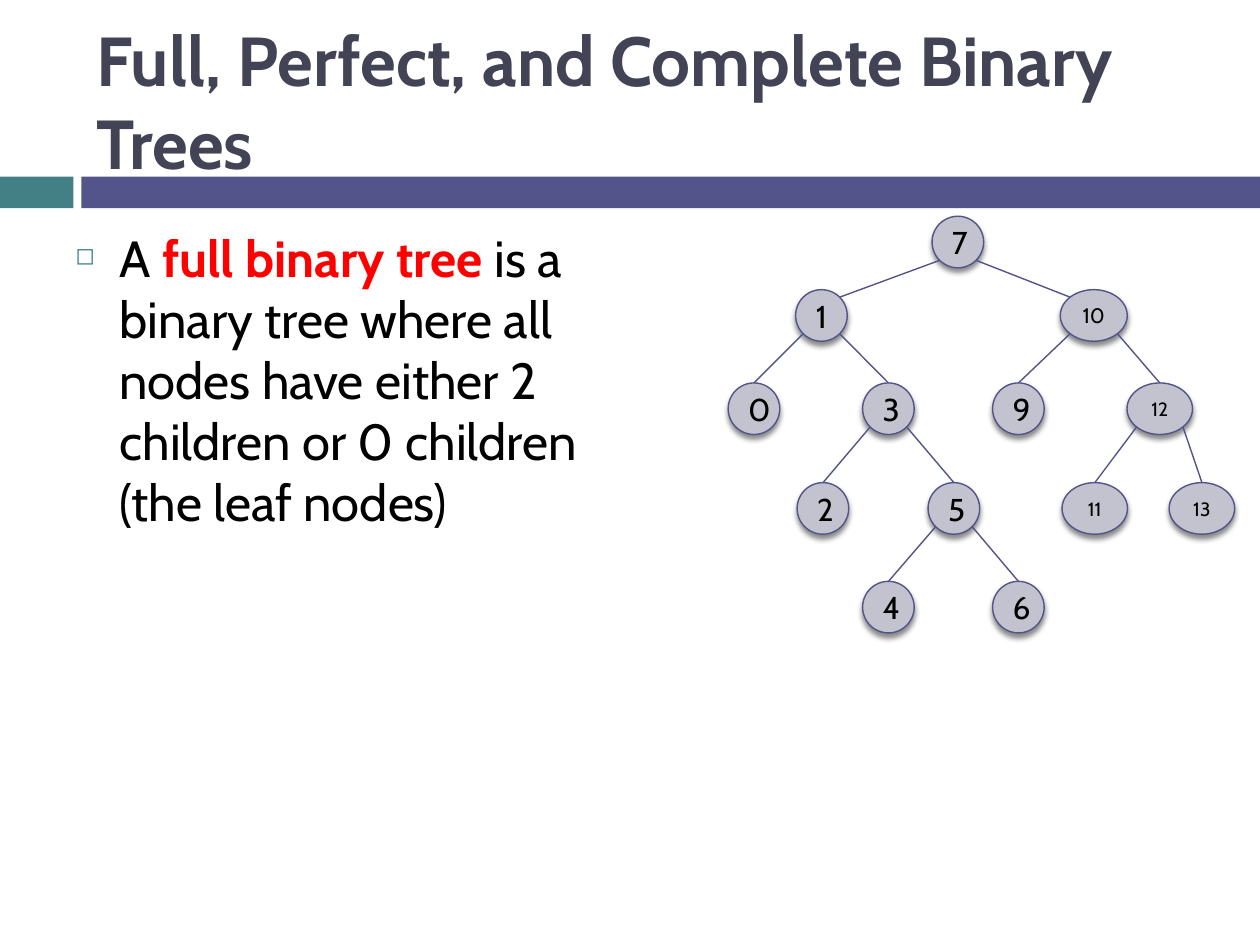
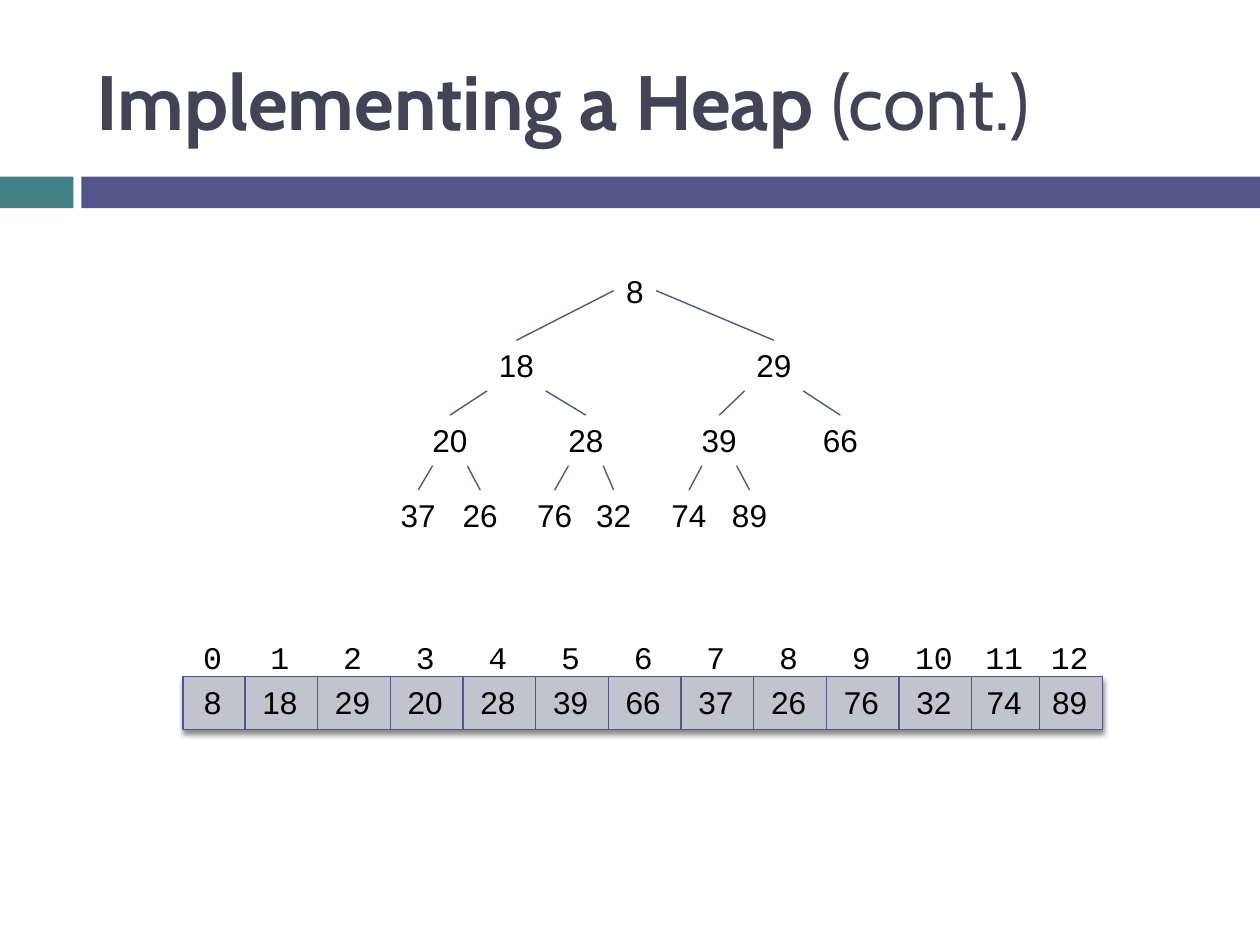
from collections import namedtuple
from itertools import pairwise

from lxml.etree import SubElement
from pptx import Presentation
from pptx.dml.color import RGBColor
from pptx.enum.shapes import MSO_CONNECTOR as Connector, MSO_SHAPE as Shape
from pptx.enum.text import MSO_ANCHOR as Anchor, PP_ALIGN as Align
from pptx.oxml.ns import qn
from pptx.util import Cm, Pt

TEAL = RGBColor(0x43, 0x80, 0x86)
INDIGO = RGBColor(0x53, 0x54, 0x8A)
SLATE = RGBColor(0x42, 0x44, 0x56)
PALE = RGBColor(0xC3, 0xC3, 0xCF)
RED = RGBColor(0xFF, 0, 0)
BLACK = RGBColor(0, 0, 0)

# All lengths are in centimetres.
Box = namedtuple("Box", "left top width height")
Node = namedtuple("Node", "x level parent size width", defaults=(18, 1.04))

TITLE_BOX = Box(1.7, 0.64, 22.66, 2.76)
BODY_BOX = Box(1.27, 4.45, 11.63, 12.57)
TREE_BOX = Box(14.67, 4.36, 10.21, 8.42)
HEAP_BOX = Box(7.82, 5.35, 9.73, 5.55)
ARRAY_BOX = Box(3.69, 13.64, 18.54, 1.07)

NODE_HEIGHT = 1.04
LEVEL_CENTRES = (0.52, 2, 3.88, 5.89, 7.88)
FULL_TREE = {
    7: Node(4.64, 0, None),
    1: Node(1.89, 1, 7),
    10: Node(7.38, 1, 7, 12, 1.35),
    0: Node(0.53, 2, 1),
    3: Node(3.24, 2, 1),
    9: Node(5.86, 2, 10),
    12: Node(8.71, 2, 10, 11, 1.32),
    2: Node(1.92, 3, 3),
    5: Node(4.56, 3, 3),
    11: Node(7.4, 3, 12, 11, 1.32),
    13: Node(9.56, 3, 12, 11, 1.32),
    4: Node(3.24, 4, 5),
    6: Node(5.86, 4, 5),
}

HEAP = (8, 18, 29, 20, 28, 39, 66, 37, 26, 76, 32, 74, 89)
HEAP_CENTRES = (4.98, 2.59, 7.78, 1.25, 3.99, 6.68, 9.12,
                0.61, 1.86, 3.36, 4.55, 6.07, 7.29)
HEAP_PITCH = 1.51
# Sideways reach and drop of the edges that leave each heap level
EDGE_STARTS = ((0.43, 0.51), (0.59, 1.02), (0.35, 1.02))
LABEL_WIDTH, LABEL_HEIGHT = 1.4, 1.02


def add_box(page, kind, box, fill):
    shape = page.shapes.add_shape(kind, *map(Cm, box))
    shape.fill.solid()
    shape.fill.fore_color.rgb = fill
    shape.line.fill.background()
    shape.shadow.inherit = False
    return shape


def add_raised(page, kind, box):
    """Add a pale outlined shape with a soft shadow below it."""
    shape = add_box(page, kind, box, PALE)
    shape.line.color.rgb = INDIGO
    shape.line.width = Pt(0.79)
    effects = shape._element.spPr.find(qn("a:effectLst"))
    shadow = SubElement(effects, qn("a:outerShdw"), blurRad=str(Pt(3)),
                        dist=str(Pt(2.4)), dir="5400000", rotWithShape="0")
    colour = SubElement(shadow, qn("a:srgbClr"), val=str(BLACK))
    SubElement(colour, qn("a:alpha"), val="45000")
    return shape


def add_line(page, start, end):
    line = page.shapes.add_connector(Connector.STRAIGHT, *map(Cm, (*start, *end)))
    line.line.color.rgb = INDIGO
    line.line.width = Pt(0.79)
    SubElement(line._element.spPr, qn("a:effectLst"))


def style(para, font, size, colour=BLACK):
    para.font.name = font
    para.font.size = Pt(size)
    para.font.color.rgb = colour


def add_frame(page, box):
    frame = page.shapes.add_textbox(*map(Cm, box)).text_frame
    frame.word_wrap = True
    return frame


def add_label(page, text, centre, top, font="Arial"):
    frame = add_frame(page, Box(centre - LABEL_WIDTH / 2, top,
                                LABEL_WIDTH, LABEL_HEIGHT))
    para = frame.paragraphs[0]
    para.text = str(text)
    para.alignment = Align.CENTER
    style(para, font, 18)


def add_page(deck, size, title, suffix=""):
    """Add a page with the two bands and a title, its suffix not bold."""
    page = deck.slides.add_slide(deck.slide_layouts[6])
    add_box(page, Shape.RECTANGLE, Box(0, 3.56, 1.48, 0.64), TEAL)
    add_box(page, Shape.RECTANGLE, Box(1.64, 3.56, 23.76, 0.64), INDIGO)
    frame = add_frame(page, TITLE_BOX)
    frame.vertical_anchor = Anchor.MIDDLE
    para = frame.paragraphs[0]
    style(para, "Cabin", size, SLATE)
    for text, bold in ((title, True), (suffix, False)):
        if text:
            span = para.add_run()
            span.text = text
            span.font.bold = bold
    return page


def add_definition(page, box):
    para = add_frame(page, box).paragraphs[0]
    para.space_before = Pt(7)
    style(para, "Cabin", 29)
    props = para._p.get_or_add_pPr()
    props.set("marL", str(Cm(0.89)))
    props.set("indent", str(Cm(-0.89)))
    bullet = [SubElement(props, qn("a:buClr")),
              SubElement(props, qn("a:buSzPct"), val="47000"),
              SubElement(props, qn("a:buChar"), char="◻")]
    SubElement(bullet[0], qn("a:srgbClr"), val=str(TEAL))
    props.find(qn("a:defRPr")).addprevious(bullet[0])
    for before, after in pairwise(bullet):
        before.addnext(after)
    for text, key_term in (
        ("A ", False),
        ("full binary tree ", True),
        ("is a binary tree where all nodes have either 2 children "
         "or 0 children (the leaf nodes)", False),
    ):
        span = para.add_run()
        span.text = text
        if key_term:
            span.font.bold = True
            span.font.color.rgb = RED


def add_full_tree(page, box):
    def rim(node, side, down):
        """Point on the node's rim: side and down are parts of its radii."""
        return (box.left + node.x + side * node.width / 2,
                box.top + LEVEL_CENTRES[node.level] + down * NODE_HEIGHT / 2)

    diagonal = 0.71
    for key, node in FULL_TREE.items():
        left, top = rim(node, -1, -1)
        oval = add_raised(page, Shape.OVAL, Box(left, top, node.width, NODE_HEIGHT))
        para = oval.text_frame.paragraphs[0]
        para.text = str(key)
        para.alignment = Align.CENTER
        style(para, "Cabin", node.size)
    for node in FULL_TREE.values():
        if node.parent is None:
            continue
        parent = FULL_TREE[node.parent]
        side = diagonal if node.x > parent.x else -diagonal
        end = rim(node, -side, -diagonal) if node.level == 1 else rim(node, 0, -1)
        add_line(page, rim(parent, side, diagonal), end)


def add_heap_tree(page, box):
    def spot(index):
        level = (index + 1).bit_length() - 1
        return box.left + HEAP_CENTRES[index], box.top + level * HEAP_PITCH, level

    for index, value in enumerate(HEAP):
        x, top, level = spot(index)
        add_label(page, value, x, top)
        if index:
            parent_x, parent_top, parent_level = spot((index - 1) // 2)
            reach, drop = EDGE_STARTS[parent_level]
            side = reach if x > parent_x else -reach
            add_line(page, (parent_x + side, parent_top + drop), (x, top))


def add_heap_array(page, box):
    add_raised(page, Shape.RECTANGLE, box)
    first, last_even, last = 1.25, 15.9, 17.27
    step = (last_even - first) / 10
    edges = [0, *(first + step * i for i in range(11)), last, box.width]
    for edge in edges[1:-1]:
        x = box.left + edge
        add_line(page, (x, box.top), (x, box.top + box.height))
    for index, (value, (start, end)) in enumerate(zip(HEAP, pairwise(edges))):
        centre = box.left + (start + end) / 2 - 0.03
        add_label(page, index, centre, box.top - 0.91, "Courier New")
        add_label(page, value, centre, box.top)


def main():
    deck = Presentation()
    deck.slide_width, deck.slide_height = Cm(25.4), Cm(19.05)

    page = add_page(deck, 39.6, "Full, Perfect, and Complete Binary Trees")
    add_definition(page, BODY_BOX)
    add_full_tree(page, TREE_BOX)

    page = add_page(deck, 44, "Implementing a Heap ", "(cont.)")
    add_heap_array(page, ARRAY_BOX)
    add_heap_tree(page, HEAP_BOX)

    deck.save("out.pptx")


if __name__ == "__main__":
    main()
